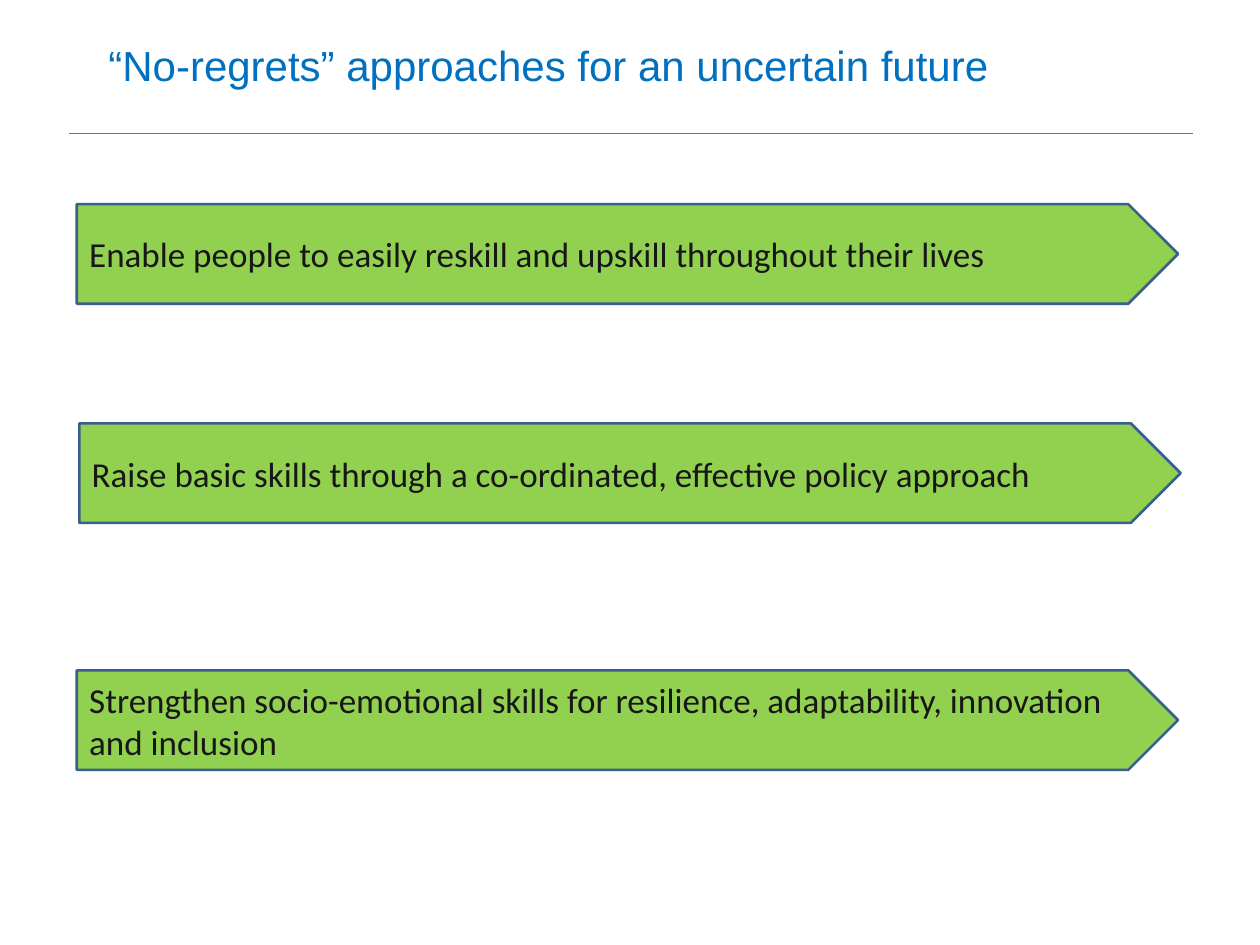
from lxml import etree
from pptx import Presentation
from pptx.dml.color import RGBColor
from pptx.enum import shapes, text
from pptx.oxml.ns import qn
from pptx.util import Inches, Pt

APPROACHES = [
    (0.61, 1.62, "Enable people to easily reskill and upskill throughout their lives"),
    (0.63, 3.36, "Raise basic skills through a co-ordinated, effective policy approach"),
    (0.61, 5.32, "Strengthen socio-emotional skills for resilience, adaptability, "
                 "innovation and inclusion"),
]


def color(hex_value):
    return RGBColor.from_string(hex_value)


def style_paragraph(paragraph, font_name, size, hex_value):
    paragraph.alignment = text.PP_ALIGN.LEFT
    paragraph.font.name = font_name
    paragraph.font.size = Pt(size)
    paragraph.font.color.rgb = color(hex_value)


def place_title(slide, wording, left, top, width, height):
    title = slide.shapes.title
    title.left, title.top = Inches(left), Inches(top)
    title.width, title.height = Inches(width), Inches(height)
    frame = title.text_frame
    frame.text = wording
    frame.word_wrap = True
    frame.vertical_anchor = text.MSO_ANCHOR.MIDDLE
    frame.margin_left = Inches(0.19)
    style_paragraph(frame.paragraphs[0], "Arial", 24, "0070C0")


def add_rule(slide, left, top, width):
    rule = slide.shapes.add_connector(
        shapes.MSO_CONNECTOR.STRAIGHT,
        Inches(left), Inches(top), Inches(left + width), Inches(top))
    rule.line.color.rgb = color("727272")
    rule.line.width = Pt(0.5)
    etree.SubElement(rule._element.spPr, qn("a:effectLst"))


def add_approach(slide, wording, left, top, width, height):
    arrow = slide.shapes.add_shape(
        shapes.MSO_SHAPE.PENTAGON,
        Inches(left), Inches(top), Inches(width), Inches(height))
    arrow.shadow.inherit = False
    arrow.fill.solid()
    arrow.fill.fore_color.rgb = color("92D050")
    arrow.line.color.rgb = color("3A5F8C")
    arrow.line.width = Pt(1.5)
    frame = arrow.text_frame
    frame.text = wording
    frame.word_wrap = True
    frame.vertical_anchor = text.MSO_ANCHOR.MIDDLE
    style_paragraph(frame.paragraphs[0], "Calibri", 20, "171717")


def main():
    deck = Presentation()
    deck.slide_width, deck.slide_height = Inches(10), Inches(7.5)
    slide = deck.slides.add_slide(deck.slide_layouts[5])
    add_rule(slide, 0.55, 1.06, 8.92)
    place_title(slide, "“No-regrets” approaches for an uncertain future",
                0.67, 0.02, 8.82, 0.99)
    for left, top, wording in APPROACHES:
        add_approach(slide, wording, left, top, 8.74, 0.79)
    deck.save("out.pptx")


if __name__ == "__main__":
    main()
